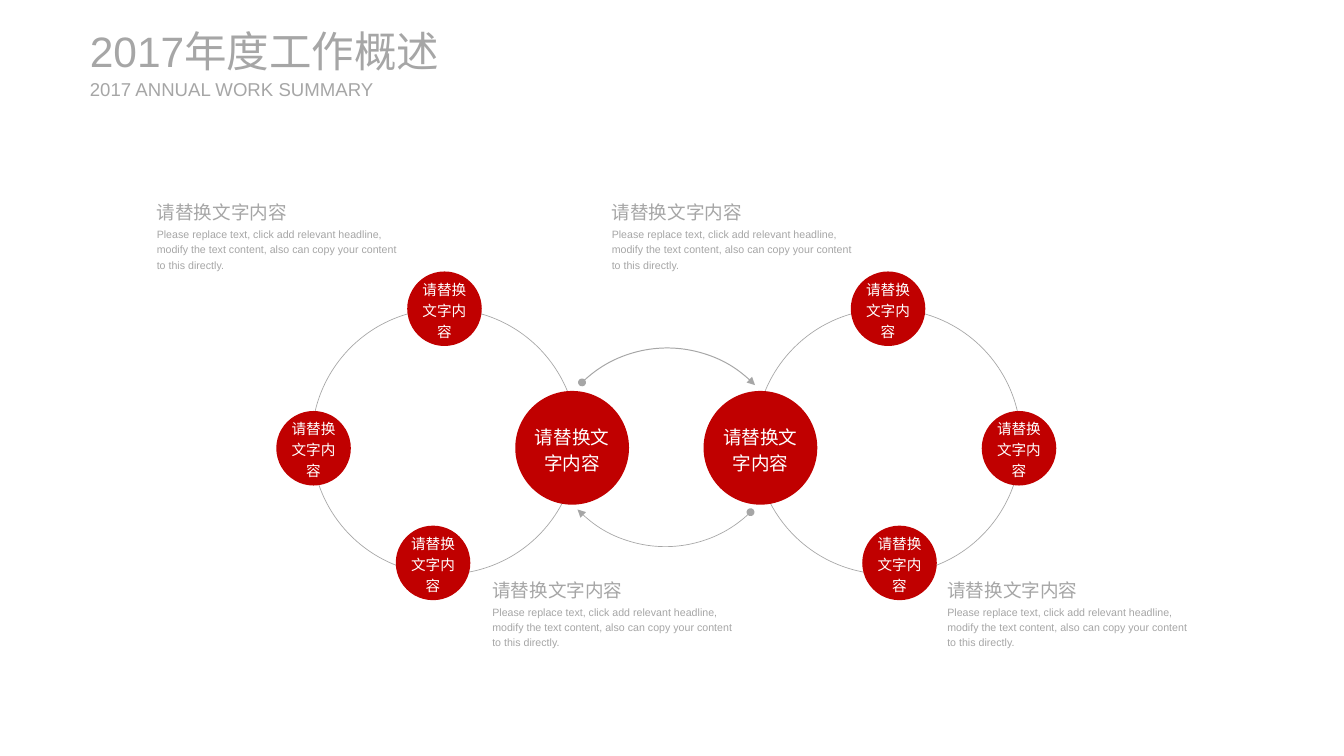
from dataclasses import dataclass

from lxml.etree import SubElement
from pptx import Presentation
from pptx.dml.color import RGBColor
from pptx.enum.shapes import MSO_SHAPE
from pptx.enum.text import MSO_ANCHOR, MSO_AUTO_SIZE, PP_ALIGN
from pptx.oxml.ns import qn
from pptx.util import Inches, Pt


@dataclass(frozen=True)
class Theme:
    font: str = "Arial"
    red: RGBColor = RGBColor(0xC0, 0x00, 0x00)
    gray: RGBColor = RGBColor(0xA6, 0xA6, 0xA6)
    white: RGBColor = RGBColor(0xFF, 0xFF, 0xFF)
    title: Pt = Pt(32)
    heading: Pt = Pt(14)
    node: Pt = Pt(11)
    body: Pt = Pt(8)


theme = Theme()
LABEL = "请替换文字内容"
DETAIL = ("Please replace text, click add relevant headline, modify the text "
          "content, also can copy your content to this directly.")


def write(shape, text, size, color, align=PP_ALIGN.LEFT,
          anchor=MSO_ANCHOR.TOP, spacing=1.2, wrap=True):
    frame = shape.text_frame
    frame.text = text
    frame.auto_size = MSO_AUTO_SIZE.NONE
    frame.word_wrap = wrap
    frame.vertical_anchor = anchor
    frame.margin_left = frame.margin_right = 0
    frame.margin_top = frame.margin_bottom = 0
    para = frame.paragraphs[0]
    para.alignment = align
    para.line_spacing = spacing
    para.font.name = theme.font
    para.font.size = size
    para.font.color.rgb = color


def add_outline(kind, left, top, diameter, weight):
    shape = page.shapes.add_shape(
        kind, Inches(left), Inches(top), Inches(diameter), Inches(diameter))
    shape.shadow.inherit = False
    shape.fill.background()
    shape.line.color.rgb = theme.gray
    shape.line.width = Pt(weight)
    return shape


deck = Presentation()
deck.slide_width = Inches(14.06)
deck.slide_height = Inches(7.91)
page = deck.slides.add_slide(deck.slide_layouts[5])

title = page.shapes.title
title.left, title.top = Inches(0.94), Inches(0.26)
title.width, title.height = Inches(4.32), Inches(0.54)
write(title, "2017年度工作概述", theme.title, theme.gray,
      anchor=MSO_ANCHOR.MIDDLE, spacing=1.0)

subtitle = page.shapes.add_textbox(
    Inches(0.94), Inches(0.81), Inches(3.07), Inches(0.24))
write(subtitle, "2017 ANNUAL WORK SUMMARY", theme.heading, theme.gray,
      anchor=MSO_ANCHOR.MIDDLE, spacing=1.0)

MIRROR_SUM = 13.94
RING_LEFT, RING_TOP, RING_SIZE = 3.26, 3.23, 2.78
NODES = [
    (5.39, 4.09, 1.19, theme.heading),
    (2.89, 4.3, 0.78, theme.node),
    (4.26, 2.84, 0.78, theme.node),
    (4.14, 5.5, 0.78, theme.node),
]
for mirrored in (False, True):
    ring_left = MIRROR_SUM - RING_LEFT - RING_SIZE if mirrored else RING_LEFT
    add_outline(MSO_SHAPE.OVAL, ring_left, RING_TOP, RING_SIZE, 0.5)
    for left, top, diameter, size in NODES:
        node_left = MIRROR_SUM - left - diameter if mirrored else left
        node = page.shapes.add_shape(
            MSO_SHAPE.OVAL, Inches(node_left), Inches(top),
            Inches(diameter), Inches(diameter))
        node.shadow.inherit = False
        node.fill.solid()
        node.fill.fore_color.rgb = theme.red
        node.line.fill.background()
        write(node, LABEL, size, theme.white,
              PP_ALIGN.CENTER, MSO_ANCHOR.MIDDLE)

for left, top, rotation, weight in [(5.7, 3.64, 315.9, 0.75),
                                    (5.68, 3.16, 135.9, 0.5)]:
    arrow = add_outline(MSO_SHAPE.ARC, left, top, 2.56, weight)
    arrow.rotation = rotation
    outline = arrow.line._get_or_add_ln()
    SubElement(outline, qn("a:headEnd"), type="oval")
    SubElement(outline, qn("a:tailEnd"), type="triangle")

for left, top in [(5.15, 6.01), (9.91, 6.01), (1.64, 2.06), (6.4, 2.06)]:
    detail = page.shapes.add_textbox(
        Inches(left), Inches(top + 0.3), Inches(2.58), Inches(0.48))
    write(detail, DETAIL, theme.body, theme.gray)
    heading = page.shapes.add_textbox(
        Inches(left), Inches(top), Inches(1.37), Inches(0.28))
    write(heading, LABEL, theme.heading, theme.gray, wrap=False)

deck.save("out.pptx")
